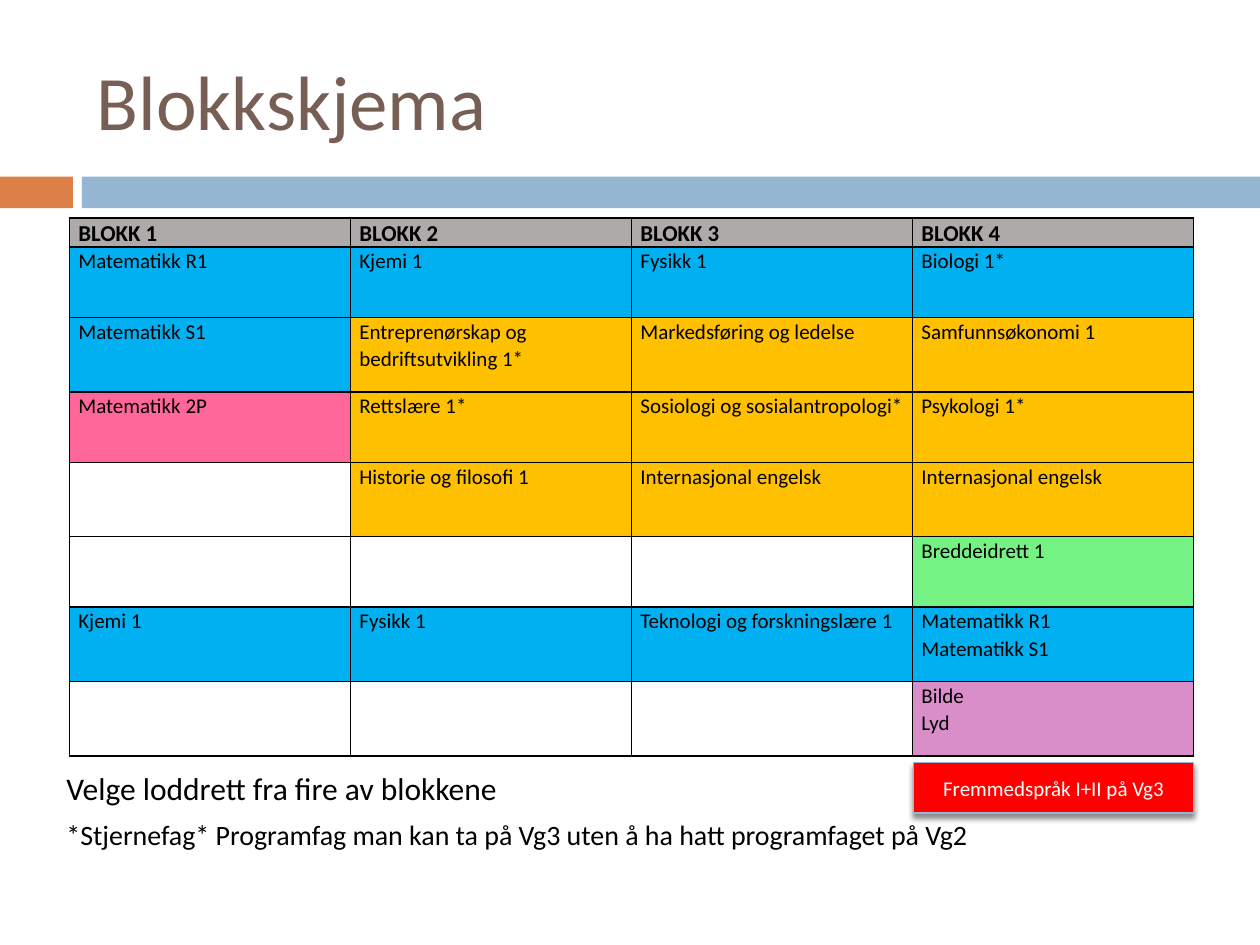
from lxml import etree
from pptx import Presentation
from pptx import util as u
from pptx.dml.color import RGBColor
from pptx.enum import shapes, text
from pptx.oxml import parse_xml
from pptx.oxml.ns import nsdecls, qn

BLACK = RGBColor(0, 0, 0)
WHITE = RGBColor(0xFF, 0xFF, 0xFF)
BROWN = RGBColor(0x77, 0x5F, 0x55)
ORANGE = RGBColor(0xDD, 0x80, 0x47)
PALE_BLUE = RGBColor(0x94, 0xB6, 0xD2)
RED = RGBColor(0xFF, 0, 0)
GRAY = RGBColor(0xAE, 0xAA, 0xAA)
BLUE = RGBColor(0, 0xB0, 0xF0)
YELLOW = RGBColor(0xFF, 0xC0, 0)
PINK = RGBColor(0xFF, 0x66, 0x99)
GREEN = RGBColor(0x74, 0xF2, 0x83)
PURPLE = RGBColor(0xD9, 0x8D, 0xC9)

LEFT, WIDTH = 1.4, 22.66
NOTE_TOP, NOTE_HEIGHT = 15.37, 1.02
EMPTY = ("", None)

HEADER = [(f"BLOKK {n}", GRAY) for n in range(1, 5)]
SUBJECTS = [
    [("Matematikk R1", BLUE), ("Kjemi 1", BLUE), ("Fysikk 1", BLUE), ("Biologi 1*", BLUE)],
    [("Matematikk S1", BLUE), ("Entreprenørskap og bedriftsutvikling 1*", YELLOW),
     ("Markedsføring og ledelse", YELLOW), ("Samfunnsøkonomi 1", YELLOW)],
    [("Matematikk 2P", PINK), ("Rettslære 1*", YELLOW),
     ("Sosiologi og sosialantropologi*", YELLOW), ("Psykologi 1*", YELLOW)],
    [EMPTY, ("Historie og filosofi 1", YELLOW),
     ("Internasjonal engelsk", YELLOW), ("Internasjonal engelsk", YELLOW)],
    [EMPTY, EMPTY, EMPTY, ("Breddeidrett 1", GREEN)],
    [("Kjemi 1", BLUE), ("Fysikk 1", BLUE), ("Teknologi og forskningslære 1", BLUE),
     ("Matematikk R1\nMatematikk S1", BLUE)],
    [EMPTY, EMPTY, EMPTY, ("Bilde\nLyd", PURPLE)],
]
ROW_HEIGHTS = [0.58, 1.42, 1.5, 1.42, 1.5, 1.42, 1.5, 1.5]


def write(tf, content, size=12, color=BLACK, bold=False, font="Calibri",
          align=text.PP_ALIGN.LEFT, spacing=None):
    """Fill a text frame, one paragraph per line of content."""
    tf.word_wrap = True
    for i, line in enumerate(content.split("\n")):
        p = tf.add_paragraph() if i else tf.paragraphs[0]
        p.alignment = align
        p.line_spacing = spacing
        p.font.size = u.Pt(size)
        if line:
            r = p.add_run()
            r.text = line
            f = r.font
            f.name, f.size, f.bold = font, u.Pt(size), bold
            f.color.rgb = color


def box(left, top, width, height):
    return [u.Cm(v) for v in (left, top, width, height)]


class Deck:
    def __init__(self, prs):
        self.s = prs.slides.add_slide(prs.slide_layouts[5])

    def title(self, content, left, top, width, height):
        sp = self.s.shapes.title
        sp.left, sp.top, sp.width, sp.height = box(left, top, width, height)
        tf = sp.text_frame
        tf.auto_size = text.MSO_AUTO_SIZE.NONE
        tf.vertical_anchor = text.MSO_ANCHOR.MIDDLE
        write(tf, content, size=44, color=BROWN)

    def rect(self, left, top, width, height, fill, line=None):
        sp = self.s.shapes.add_shape(shapes.MSO_SHAPE.RECTANGLE, *box(left, top, width, height))
        sp.shadow.inherit = False
        sp.fill.solid()
        sp.fill.fore_color.rgb = fill
        if line is None:
            sp.line.fill.background()
        else:
            sp.line.color.rgb = line
            sp.line.width = u.Pt(0.79)
        return sp

    def button(self, content, left, top, width, height):
        sp = self.rect(left, top, width, height, RED, PALE_BLUE)
        effects = sp._element.spPr.find(qn("a:effectLst"))
        effects.append(parse_xml(
            f'<a:outerShdw {nsdecls("a")} blurRad="{u.Pt(3)}" dist="{u.Pt(2.4)}" dir="5400000"'
            ' rotWithShape="0"><a:srgbClr val="000000"><a:alpha val="45000"/></a:srgbClr>'
            '</a:outerShdw>'))
        sp.text_frame.vertical_anchor = text.MSO_ANCHOR.MIDDLE
        write(sp.text_frame, content, color=WHITE, align=text.PP_ALIGN.CENTER)

    def note(self, content, left, top, width, height, size):
        tf = self.s.shapes.add_textbox(*box(left, top, width, height)).text_frame
        tf.auto_size = text.MSO_AUTO_SIZE.SHAPE_TO_FIT_TEXT
        write(tf, content, size=size)

    def table(self, rows, heights, left, top, width):
        frame = self.s.shapes.add_table(len(rows), len(rows[0]),
                                        *box(left, top, width, sum(heights)))
        tbl = frame.table
        tbl.first_row = tbl.horz_banding = False
        for row, height in zip(tbl.rows, heights):
            row.height = u.Cm(height)
        for i, row in enumerate(rows):
            for j, (content, fill) in enumerate(row):
                self.cell(tbl.cell(i, j), content, fill, header=i == 0)

    def cell(self, cell, content, fill, header):
        cell.margin_left = cell.margin_right = u.Cm(0.18)
        cell.margin_top = cell.margin_bottom = 0
        tc_pr = cell._tc.get_or_add_tcPr()
        for side in ("lnL", "lnR", "lnT", "lnB"):
            ln = etree.SubElement(tc_pr, qn(f"a:{side}"), w=str(u.Pt(1)))
            solid = etree.SubElement(ln, qn("a:solidFill"))
            etree.SubElement(solid, qn("a:srgbClr"), val=str(BLACK))
        if fill is None:
            cell.fill.background()
        else:
            cell.fill.solid()
            cell.fill.fore_color.rgb = fill
        write(cell.text_frame, content, size=13 if header else 12, bold=header, spacing=1.07)


def main():
    prs = Presentation()
    prs.slide_width, prs.slide_height = u.Cm(25.4), u.Cm(19.05)
    deck = Deck(prs)
    deck.rect(0, 3.56, 1.47, 0.64, ORANGE)
    deck.rect(1.65, 3.56, 23.75, 0.64, PALE_BLUE)
    deck.title("Blokkskjema", 1.7, 0.64, WIDTH, 2.74)
    deck.note("*Stjernefag* Programfag man kan ta på Vg3 uten å ha hatt programfaget på Vg2",
              1.09, 16.36, 21.06, 0.94, size=16)
    deck.note("Velge loddrett fra fire av blokkene", 1.09, NOTE_TOP, 14.4, NOTE_HEIGHT, size=18)
    deck.table([HEADER, *SUBJECTS], ROW_HEIGHTS, LEFT, 4.39, WIDTH)
    deck.button("Fremmedspråk I+II på Vg3", 18.42, NOTE_TOP, 5.64, NOTE_HEIGHT)
    prs.save("out.pptx")


if __name__ == "__main__":
    main()
